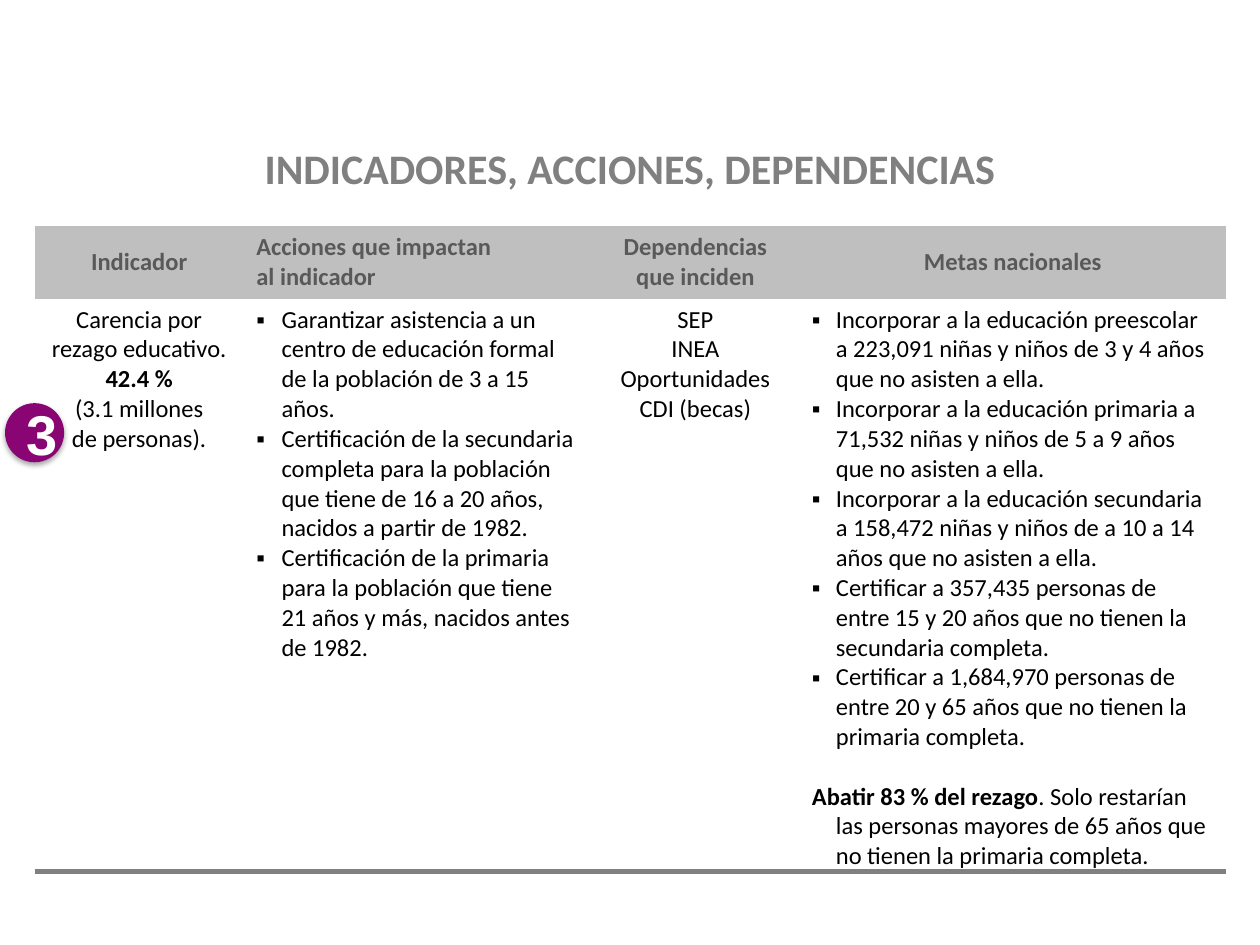
from lxml import etree
from pptx import Presentation
from pptx.dml.color import RGBColor
from pptx.enum.shapes import MSO_SHAPE
from pptx.enum.text import MSO_ANCHOR, PP_ALIGN
from pptx.oxml import parse_xml
from pptx.oxml.ns import nsdecls, qn
from pptx.util import Pt

NO_STYLE = "{2D5ABB26-0587-4C30-8999-92F81FD0307C}"
COLUMNS = [119.5, 198.7, 118.8, 244]
ROWS = [41, 326]
HEADERS = [["Indicador"],
           ["Acciones que impactan", "al indicador"],
           ["Dependencias", "que inciden"],
           ["Metas nacionales"]]
INDICATOR = ["Carencia por rezago educativo.", "42.4 %", "(3.1 millones", "de personas)."]
ACTIONS = [
    "Garantizar asistencia a un centro de educación formal de la población de 3 a 15 años.",
    "Certificación de la secundaria completa para la población que tiene de 16 a 20 años, "
    "nacidos a partir de 1982.",
    "Certificación de la primaria para la población que tiene 21 años y más, "
    "nacidos antes de 1982.",
]
AGENCIES = ["SEP", "INEA", "Oportunidades", "CDI (becas)"]
GOALS = [
    "Incorporar a la educación preescolar a 223,091 niñas y niños de 3 y 4 años "
    "que no asisten a ella.",
    "Incorporar a la educación primaria a 71,532 niñas y niños de 5 a 9 años "
    "que no asisten a ella.",
    "Incorporar a la educación secundaria a 158,472 niñas y niños de a 10 a 14 años "
    "que no asisten a ella.",
    "Certificar a 357,435 personas de entre 15 y 20 años que no tienen la secundaria completa.",
    "Certificar a 1,684,970 personas de entre 20 y 65 años que no tienen la primaria completa.",
]
SUMMARY = [("Abatir 83 % del rezago", True),
           (". Solo restarían las personas mayores de 65 años "
            "que no tienen la primaria completa.", False)]


def rgb(value):
    return RGBColor.from_string(value)


def add_text(tf, text, size=14, font="Calibri", color="000000", bold=False,
             align=PP_ALIGN.LEFT, hang=0, bullet=False, before=0):
    """Append a paragraph; text is a string or a list of (text, bold) runs."""
    first = tf.paragraphs[0]
    p = tf.add_paragraph() if first.runs else first
    p.alignment = align
    if before:
        p.space_before = Pt(before)
    if hang:
        pPr = p._p.get_or_add_pPr()
        pPr.set("marL", str(Pt(hang)))
        pPr.set("indent", str(-Pt(hang)))
        if bullet:
            etree.SubElement(pPr, qn("a:buFont")).set("typeface", "Arial")
            etree.SubElement(pPr, qn("a:buChar")).set("char", "▪")
    for part, strong in [(text, bold)] if isinstance(text, str) else text:
        r = p.add_run()
        r.text = part
        r.font.size, r.font.name, r.font.bold = Pt(size), font, strong
        r.font.color.rgb = rgb(color)


def add_bottom_border(cell, color, width):
    cell._tc.get_or_add_tcPr().insert(0, parse_xml(
        f'<a:lnB {nsdecls("a")} w="{Pt(width)}"><a:solidFill>'
        f'<a:srgbClr val="{color}"/></a:solidFill></a:lnB>'))


def add_title(s, x, y, w, h):
    tf = s.shapes.add_textbox(Pt(x), Pt(y), Pt(w), Pt(h)).text_frame
    tf.word_wrap = True
    tf.vertical_anchor = MSO_ANCHOR.BOTTOM
    add_text(tf, "INDICADORES, ACCIONES, DEPENDENCIAS", size=24, color="808080",
             bold=True, align=PP_ALIGN.CENTER)


def add_indicator_table(s, x, y):
    frame = s.shapes.add_table(2, 4, Pt(x), Pt(y), Pt(sum(COLUMNS)), Pt(sum(ROWS)))
    table = frame.table
    table.first_row = table.horz_banding = False
    table._tbl.tblPr.find(qn("a:tableStyleId")).text = NO_STYLE
    for column, width in zip(table.columns, COLUMNS):
        column.width = Pt(width)
    for row, height in zip(table.rows, ROWS):
        row.height = Pt(height)

    # Header row: only the actions column is left-aligned
    for i, lines in enumerate(HEADERS):
        cell = table.cell(0, i)
        cell.fill.solid()
        cell.fill.fore_color.rgb = rgb("BFBFBF")
        cell.vertical_anchor = MSO_ANCHOR.TOP if i == 1 else MSO_ANCHOR.MIDDLE
        for line in lines:
            add_text(cell.text_frame, line, color="595959", bold=True,
                     align=PP_ALIGN.LEFT if i == 1 else PP_ALIGN.CENTER)

    # Body row
    body = [table.cell(1, i) for i in range(4)]
    for cell in body:
        cell.fill.background()
        cell.margin_bottom = 0
        add_bottom_border(cell, "808080", 3)
    indicator, actions, agencies, goals = [cell.text_frame for cell in body]
    for line in INDICATOR:
        add_text(indicator, line, bold=line.endswith("%"), align=PP_ALIGN.CENTER)
    for line in ACTIONS:
        add_text(actions, line, hang=14.4, bullet=True)
    for line in AGENCIES:
        add_text(agencies, line, align=PP_ALIGN.CENTER)
    for line in GOALS:
        add_text(goals, line, hang=13.7, bullet=True)
    add_text(goals, SUMMARY, hang=13.7, before=17)


def add_number_badge(s, x, y, size):
    sp = s.shapes.add_shape(MSO_SHAPE.OVAL, Pt(x), Pt(y), Pt(size), Pt(size))
    sp.fill.solid()
    sp.fill.fore_color.rgb = rgb("8A0574")
    sp.line.fill.background()
    # Soft shadow straight below
    sp._element.spPr.append(parse_xml(
        f'<a:effectLst {nsdecls("a")}><a:outerShdw blurRad="{Pt(3.1)}" dist="{Pt(1.8)}" '
        'dir="5400000" rotWithShape="0"><a:srgbClr val="000000"><a:alpha val="35000"/>'
        '</a:srgbClr></a:outerShdw></a:effectLst>'))
    tf = sp.text_frame
    tf.vertical_anchor = MSO_ANCHOR.MIDDLE
    add_text(tf, "3", size=32, font="Arial", color="FFFFFF", bold=True,
             align=PP_ALIGN.CENTER)


def main():
    prs = Presentation()
    prs.slide_width, prs.slide_height = Pt(720), Pt(540)
    s = prs.slides.add_slide(prs.slide_layouts[6])
    add_indicator_table(s, 19.8, 129.3)
    add_number_badge(s, 2.9, 230.4, 33.8)
    add_title(s, 0, 77, 720, 36.7)
    prs.save("out.pptx")


if __name__ == "__main__":
    main()
